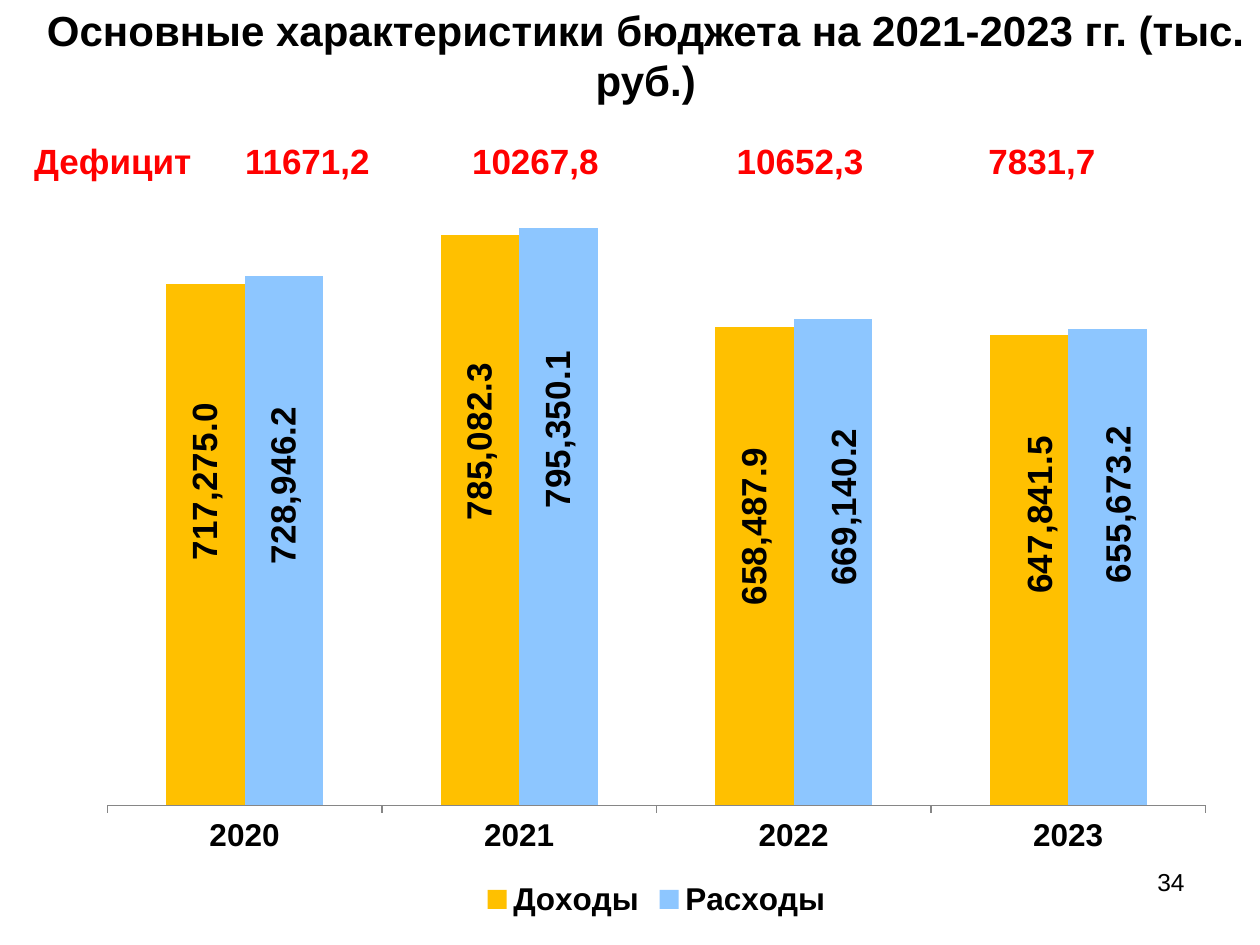
from lxml.etree import SubElement
from pptx import Presentation
from pptx.chart.data import CategoryChartData
from pptx.dml.color import RGBColor
from pptx.enum.chart import XL_CHART_TYPE, XL_LABEL_POSITION, XL_LEGEND_POSITION, XL_TICK_MARK
from pptx.enum.text import MSO_ANCHOR, PP_ALIGN
from pptx.oxml import parse_xml
from pptx.oxml.ns import nsdecls, qn
from pptx.util import Inches, Pt

COLORS = {
    "text": "000000",
    "deficit": "FF0000",
    "income": "FFC000",
    "expenses": "8DC6FF",
    "axis": "868686",
    "background": "FFFFFF",
}
YEARS = ["2020", "2021", "2022", "2023"]
DEFICITS = ["11671,2", "10267,8", "10652,3", "7831,7"]
NUMBER_FORMAT = "#,##0.0"
# name, colour, values, label shifts from the bar centre as shares of the chart size
SERIES = [
    ("Доходы", "income", [717275, 785082.3, 658487.9, 647841.5],
     [(0, -0.08), (0, -0.1), (0, -0.05), (0.01, -0.07)]),
    ("Расходы", "expenses", [728946.2, 795350.1, 669140.2, 655673.2],
     [(0, -0.07), (0, -0.11), (0.01, -0.07), (0.01, -0.08)]),
]


def manual_layout(modes=(), **numbers):
    layout = parse_xml(f"<c:layout {nsdecls('c')}><c:manualLayout/></c:layout>")
    for tag, value in [*modes, *numbers.items()]:
        SubElement(layout[0], qn(f"c:{tag}")).set("val", str(value))
    return layout


def turn_upright(label_element):
    """Rotate label text; the end mark keeps its style from being skipped as empty."""
    text_style = label_element.find(qn("c:txPr"))
    body = text_style.find(qn("a:bodyPr"))
    body.set("rot", "-5400000")
    body.set("vert", "horz")
    paragraph = text_style.find(qn("a:p"))
    if paragraph.find(qn("a:endParaRPr")) is None:
        SubElement(paragraph, qn("a:endParaRPr")).set("lang", "ru-RU")


class BudgetSlide:
    """Holds the slide and its common text style."""

    font_name = "Arial"

    def __init__(self, presentation):
        self.slide = presentation.slides.add_slide(presentation.slide_layouts[6])

    def color(self, name):
        return RGBColor.from_string(COLORS[name])

    def style(self, font, size, bold=False, color="text"):
        font.name = self.font_name
        font.size = Pt(size)
        font.bold = bold
        font.color.rgb = self.color(color)

    def text(self, box, content, size, align, bold=False, anchor=MSO_ANCHOR.TOP):
        frame = self.slide.shapes.add_textbox(*map(Inches, box)).text_frame
        frame.word_wrap = True
        frame.vertical_anchor = anchor
        paragraph = frame.paragraphs[0]
        paragraph.text = content
        paragraph.alignment = align
        self.style(paragraph.font, size, bold)

    def table(self, box, widths, contents):
        table = self.slide.shapes.add_table(1, len(widths), *map(Inches, box)).table
        table.first_row = table.horz_banding = False
        for index, (width, content) in enumerate(zip(widths, contents)):
            table.columns[index].width = Inches(width)
            cell = table.cell(0, index)
            cell.fill.solid()
            cell.fill.fore_color.rgb = self.color("background")
            paragraph = cell.text_frame.paragraphs[0]
            paragraph.text = content
            paragraph.alignment = PP_ALIGN.CENTER if index else PP_ALIGN.LEFT
            self.style(paragraph.font, 20, True, "deficit")

    def chart(self, box):
        data = CategoryChartData(number_format=NUMBER_FORMAT)
        data.categories = YEARS
        for name, _, values, _ in SERIES:
            data.add_series(name, values)
        chart = self.slide.shapes.add_chart(
            XL_CHART_TYPE.COLUMN_CLUSTERED, *map(Inches, box), data).chart
        self.style(chart.font, 18)
        chart.has_title = False
        chart.has_legend = True
        chart.legend.position = XL_LEGEND_POSITION.BOTTOM
        chart.legend.include_in_layout = False
        self.style(chart.legend.font, 18, True)

        value_axis = chart.value_axis
        value_axis.visible = False
        value_axis.has_major_gridlines = False
        value_axis.minimum_scale = 200
        value_axis.maximum_scale = 900000
        category_axis = chart.category_axis
        category_axis.major_tick_mark = XL_TICK_MARK.OUTSIDE
        category_axis.format.line.color.rgb = self.color("axis")
        self.style(category_axis.tick_labels.font, 18, True)

        plot = chart.plots[0]
        plot.gap_width = 150
        plot.overlap = 0
        plot.vary_by_categories = False
        for series, (_, color, _, shifts) in zip(plot.series, SERIES):
            series.format.fill.solid()
            series.format.fill.fore_color.rgb = self.color(color)
            self.bar_labels(series, shifts)

        plot_area = chart._chartSpace.chart.plotArea
        for old_layout in plot_area.findall(qn("c:layout")):
            plot_area.remove(old_layout)
        modes = [("layoutTarget", "inner"), ("xMode", "edge"), ("yMode", "edge")]
        plot_area.insert(0, manual_layout(modes, x=0.02, y=0.02, w=0.96, h=0.83))

    def bar_labels(self, series, shifts):
        """Turn the value labels upright and shift each from its bar's centre."""
        labels = series.data_labels
        labels.show_value = True
        labels.number_format = NUMBER_FORMAT
        labels.number_format_is_linked = False
        labels.position = XL_LABEL_POSITION.CENTER
        self.style(labels.font, 20, True)
        turn_upright(labels._element)
        leader_lines = labels._element.find(qn("c:showLeaderLines"))
        if leader_lines is None:
            leader_lines = SubElement(labels._element, qn("c:showLeaderLines"))
        leader_lines.set("val", "0")
        extension = parse_xml(
            f'<c:extLst {nsdecls("c")}><c:ext uri="{{CE6537A1-D6FC-4f65-9D91-7224C49458BB}}" '
            'xmlns:c15="http://schemas.microsoft.com/office/drawing/2012/chart">'
            '<c15:showLeaderLines val="0"/></c:ext></c:extLst>')
        labels._element.append(extension)
        for index, (x, y) in enumerate(shifts):
            data_label = series.points[index].data_label
            data_label.position = XL_LABEL_POSITION.CENTER
            self.style(data_label.font, 20, True)
            label = labels._element.findall(qn("c:dLbl"))[index]
            turn_upright(label)
            label.insert(1, manual_layout(x=x, y=y))


def main():
    presentation = Presentation()
    presentation.slide_width = Inches(10)
    presentation.slide_height = Inches(7.5)
    budget = BudgetSlide(presentation)
    budget.text((0.25, 0.25, 9.75, 0.37),
                "Основные характеристики бюджета на 2021-2023 гг. (тыс. руб.)",
                24, PP_ALIGN.CENTER, True, MSO_ANCHOR.MIDDLE)
    budget.chart((0.67, 1.08, 9.08, 6.25))
    budget.text((7.17, 6.83, 2.33, 0.52), "34", 14, PP_ALIGN.RIGHT)
    budget.table((0.17, 1.08, 9, 0.42), [1.54, 1.46, 2.16, 2.04, 1.8],
                 ["Дефицит", *DEFICITS])
    presentation.save("out.pptx")


if __name__ == "__main__":
    main()
